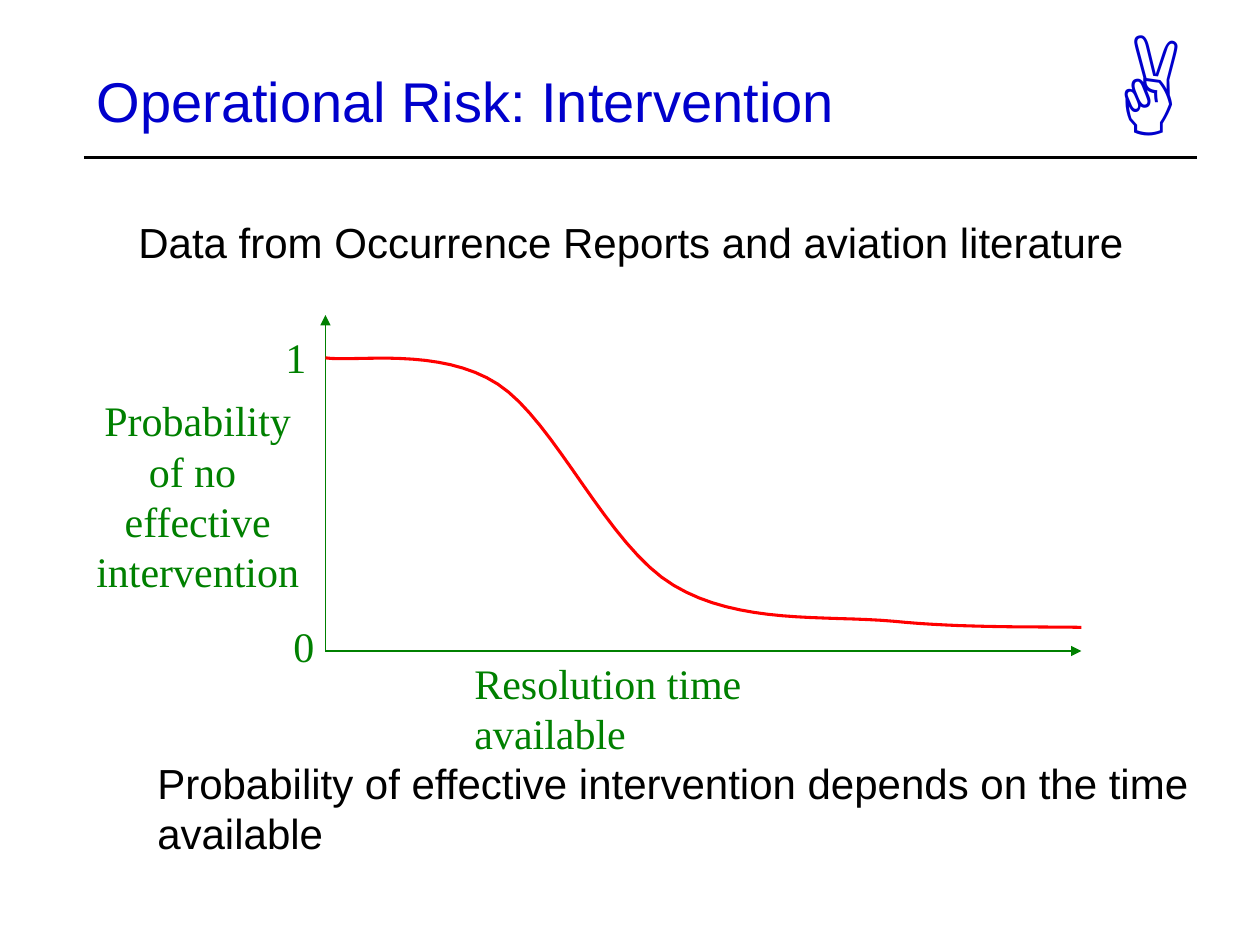
from lxml.etree import SubElement
from pptx import Presentation
from pptx.dml.color import RGBColor
from pptx.enum.shapes import MSO_CONNECTOR as Connector
from pptx.enum.text import MSO_ANCHOR as Anchor, MSO_AUTO_SIZE as AutoSize, PP_ALIGN as Align
from pptx.oxml.ns import qn
from pptx.util import Pt

COLORS = {"blue": "0000CC", "green": "008000", "red": "FF0000", "black": "000000"}
SANS, SERIF = "Arial", "Times New Roman"

TITLE = "Operational Risk: Intervention"
TITLE_BOX = (48, 12, 612, 90)

AXIS_LABEL = {"name": SERIF, "size": 24, "color": "green"}
STATEMENT = {"name": SANS, "size": 24, "color": "black"}
HAND = {"name": SERIF, "size": 72, "color": "blue"}

# lines, box (left, top, width, height), font, alignment, wraps, right inset, line spacing
LABELS = [
    (["✌"], (630, 0, 84, 93.6), HAND, Align.LEFT, True, 7.2, None),
    (["Probability", "of no ", "effective", "intervention"],
     (46, 222, 134, 122.4), AXIS_LABEL, Align.CENTER, False, 7.2, 28.8),
    (["0"], (160.5, 351, 26.5, 36), AXIS_LABEL, Align.LEFT, False, 7.2, 28.8),
    (["1"], (156, 186, 26.5, 36), AXIS_LABEL, Align.LEFT, False, 7.2, 28.8),
    (["Resolution time available"],
     (264, 372, 259, 36), AXIS_LABEL, Align.LEFT, True, 43.2, 28.8),
    (["Data from Occurrence Reports and aviation literature"],
     (72, 120, 577.5, 36), STATEMENT, Align.LEFT, False, 7.2, 28.8),
    (["Probability of effective intervention depends on the time", "available"],
     (82.8, 429.2, 611, 64.8), STATEMENT, Align.LEFT, False, 7.2, 28.8),
]

ORIGIN = (186, 372)
# start, end, colour, width, has arrowhead
LINES = [
    ((48, 90), (684, 90), "black", 2, False),
    (ORIGIN, (618, 372), "green", 0.75, True),
    (ORIGIN, (186, 180), "green", 0.75, True),
]

CURVE_START = (186, 204.5)
# two control points and the end of each Bezier segment
CURVE_SEGMENTS = [
    ((202.5, 207), (251.5, 198), (284.5, 219.5)),
    ((317.5, 241), (347, 312), (385, 334.5)),
    ((422.5, 357), (471.5, 351.5), (510.5, 355)),
    ((549.5, 359), (595.5, 358), (618, 358.5)),
]
STEPS = 16


def rgb(color):
    return RGBColor.from_string(COLORS[color])


def points(values):
    return [Pt(value) for value in values]


def set_all(target, values):
    for attribute, value in values.items():
        setattr(target, attribute, value)


def format_font(font, look):
    set_all(font, {"name": look["name"], "size": Pt(look["size"])})
    font.color.rgb = rgb(look["color"])


def add_label(slide, lines, box, look, align, wraps, right_inset, spacing):
    frame = slide.shapes.add_textbox(*points(box)).text_frame
    set_all(frame, {"text": "\n".join(lines), "word_wrap": wraps,
                    "auto_size": AutoSize.SHAPE_TO_FIT_TEXT,
                    "margin_right": Pt(right_inset)})
    for paragraph in frame.paragraphs:
        paragraph.alignment = align
        if spacing:
            paragraph.line_spacing = Pt(spacing)
        format_font(paragraph.runs[0].font, look)


def add_line(slide, start, end, color, width, arrow):
    connector = slide.shapes.add_connector(Connector.STRAIGHT, *points(start + end))
    connector.line.color.rgb = rgb(color)
    connector.line.width = Pt(width)
    if arrow:
        SubElement(connector.line._get_or_add_ln(), qn("a:tailEnd"), type="triangle")
    SubElement(connector._element.spPr, qn("a:effectLst"))


def bezier_point(knots, t):
    weights = ((1 - t) ** 3, 3 * t * (1 - t) ** 2, 3 * t * t * (1 - t), t ** 3)
    return tuple(Pt(sum(w * knot[axis] for w, knot in zip(weights, knots))) for axis in (0, 1))


def add_curve(slide):
    start, vertices = CURVE_START, []
    for segment in CURVE_SEGMENTS:
        vertices += [bezier_point((start, *segment), i / STEPS) for i in range(1, STEPS + 1)]
        start = segment[-1]
    builder = slide.shapes.build_freeform(*points(CURVE_START))
    builder.add_line_segments(vertices, close=False)
    curve = builder.convert_to_shape()
    curve.shadow.inherit = False
    curve.fill.background()
    curve.line.color.rgb = rgb("red")
    curve.line.width = Pt(1.75)


def main():
    deck = Presentation()
    set_all(deck, {"slide_width": Pt(720), "slide_height": Pt(540)})
    slide = deck.slides.add_slide(deck.slide_layouts[5])

    title = slide.shapes.title
    set_all(title, dict(zip(("left", "top", "width", "height"), points(TITLE_BOX))))
    set_all(title.text_frame, {"text": TITLE, "vertical_anchor": Anchor.MIDDLE,
                               "word_wrap": True, "auto_size": AutoSize.NONE})
    heading = title.text_frame.paragraphs[0]
    heading.alignment = Align.LEFT
    format_font(heading.runs[0].font, {"name": SANS, "size": 32, "color": "blue"})

    for line in LINES:
        add_line(slide, *line)
    add_curve(slide)
    for label in LABELS:
        add_label(slide, *label)
    deck.save("out.pptx")


if __name__ == "__main__":
    main()
